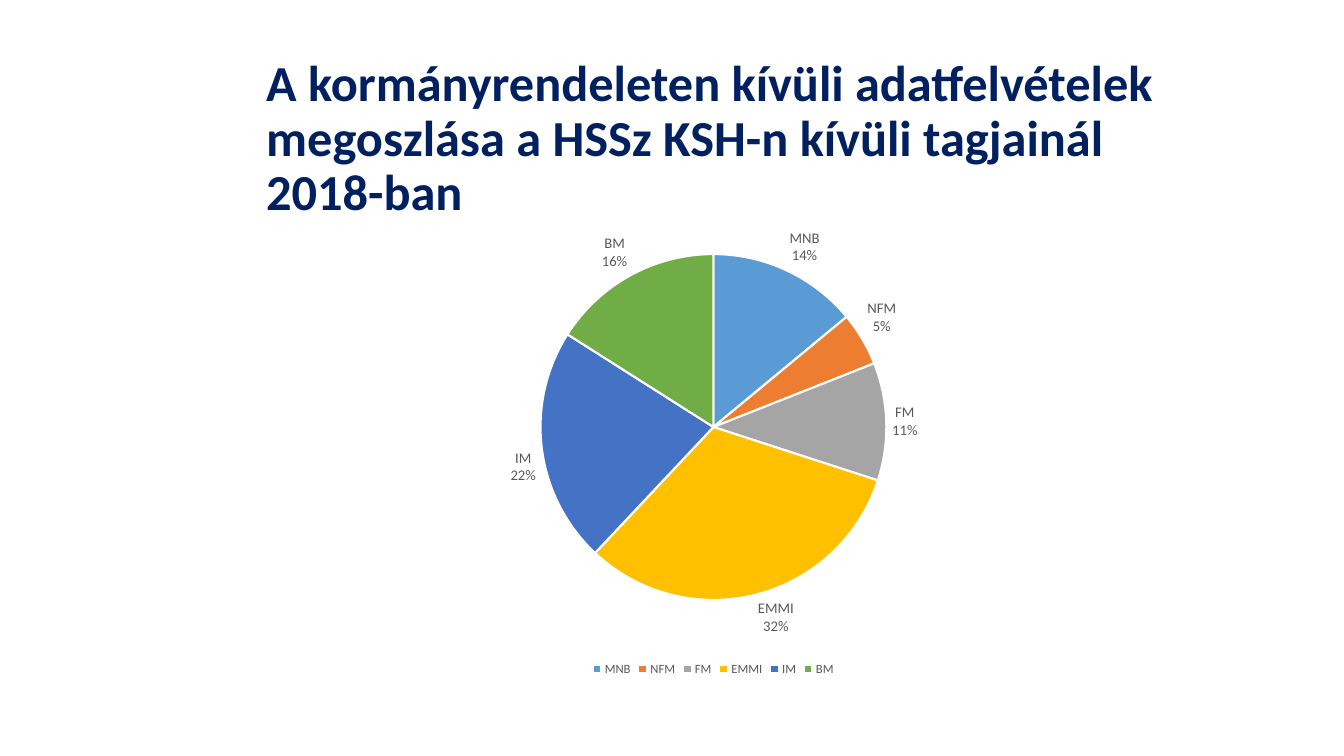
from lxml import etree
from pptx import Presentation
from pptx import util as u
from pptx.chart.data import CategoryChartData
from pptx.dml.color import RGBColor
from pptx.enum import chart as ch, text

TITLE = ("A kormányrendeleten kívüli adatfelvételek megoszlása "
         "a HSSz KSH-n kívüli tagjainál 2018-ban")
SHARES = [  # member, percent, slice colour
    ("MNB", 14, "5B9BD5"),
    ("NFM", 5, "ED7D31"),
    ("FM", 11, "A5A5A5"),
    ("EMMI", 32, "FFC000"),
    ("IM", 22, "4472C4"),
    ("BM", 16, "70AD47"),
]
FONT, NAVY, GREY, WHITE = "Calibri", "002060", "595959", "FFFFFF"
LEFT, WIDTH = u.Cm(6.46), u.Cm(23.04)
PIE_AREA = {"x": 0.31, "y": 0.1, "w": 0.38, "h": 0.73}  # fractions of the chart


def rgb(value):
    return RGBColor.from_string(value)


def style(font, size, colour, bold=False):
    font.name, font.size, font.bold = FONT, u.Pt(size), bold
    font.color.rgb = rgb(colour)


def place_plot(chart, area):
    """Fix the inner plot area, which python-pptx leaves automatic."""
    plot_area = chart.plots[0]._element.getparent()
    ns = "{%s}" % plot_area.nsmap["c"]
    for old in plot_area.findall(ns + "layout"):
        plot_area.remove(old)
    layout = etree.Element(ns + "layout")
    manual = etree.SubElement(layout, ns + "manualLayout")
    settings = [("layoutTarget", "inner"), ("xMode", "edge"), ("yMode", "edge")]
    for tag, value in settings + list(area.items()):
        etree.SubElement(manual, ns + tag).set("val", str(value))
    plot_area.insert(0, layout)


def add_title(slide):
    frame = slide.shapes.add_textbox(LEFT, u.Cm(2.36), WIDTH, u.Cm(2.34)).text_frame
    frame.word_wrap = True
    frame.vertical_anchor = text.MSO_ANCHOR.MIDDLE
    frame.text = TITLE
    heading = frame.paragraphs[0]
    heading.line_spacing = 0.9
    style(heading.runs[0].font, 36, NAVY, bold=True)


def add_pie(slide):
    members, percents, colours = zip(*SHARES)
    data = CategoryChartData()
    data.categories = members
    data.add_series("Series 1", percents)
    chart = slide.shapes.add_chart(ch.XL_CHART_TYPE.PIE, LEFT, u.Cm(5.21),
                                   WIDTH, u.Cm(11.94), data).chart
    style(chart.font, 10, "000000")
    chart.has_title = False
    chart.has_legend = True
    chart.legend.position = ch.XL_LEGEND_POSITION.BOTTOM
    chart.legend.include_in_layout = False
    style(chart.legend.font, 9, GREY)
    place_plot(chart, PIE_AREA)

    pie = chart.plots[0]
    pie.vary_by_categories = True
    for index, colour in enumerate(colours):
        part = pie.series[0].points[index].format
        part.fill.solid()
        part.fill.fore_color.rgb = rgb(colour)
        part.line.color.rgb = rgb(WHITE)
        part.line.width = u.Pt(1.5)

    labels = pie.series[0].data_labels
    labels.show_value = False
    labels.show_percentage = labels.show_category_name = True
    labels.number_format, labels.number_format_is_linked = "0%", False
    labels.position = ch.XL_LABEL_POSITION.OUTSIDE_END
    style(labels.font, 10.5, GREY)
    flag = labels._element.find("{*}showBubbleSize")
    if flag is None:
        flag = labels._element.find("{*}showPercent")
    separator = etree.Element(flag.tag.split("}")[0] + "}separator")
    separator.text = "\n"
    flag.addnext(separator)


def main():
    deck = Presentation()
    deck.slide_width, deck.slide_height = u.Cm(33.87), u.Cm(19.05)
    slide = deck.slides.add_slide(deck.slide_layouts[6])
    add_title(slide)
    add_pie(slide)
    deck.save("out.pptx")


if __name__ == "__main__":
    main()
